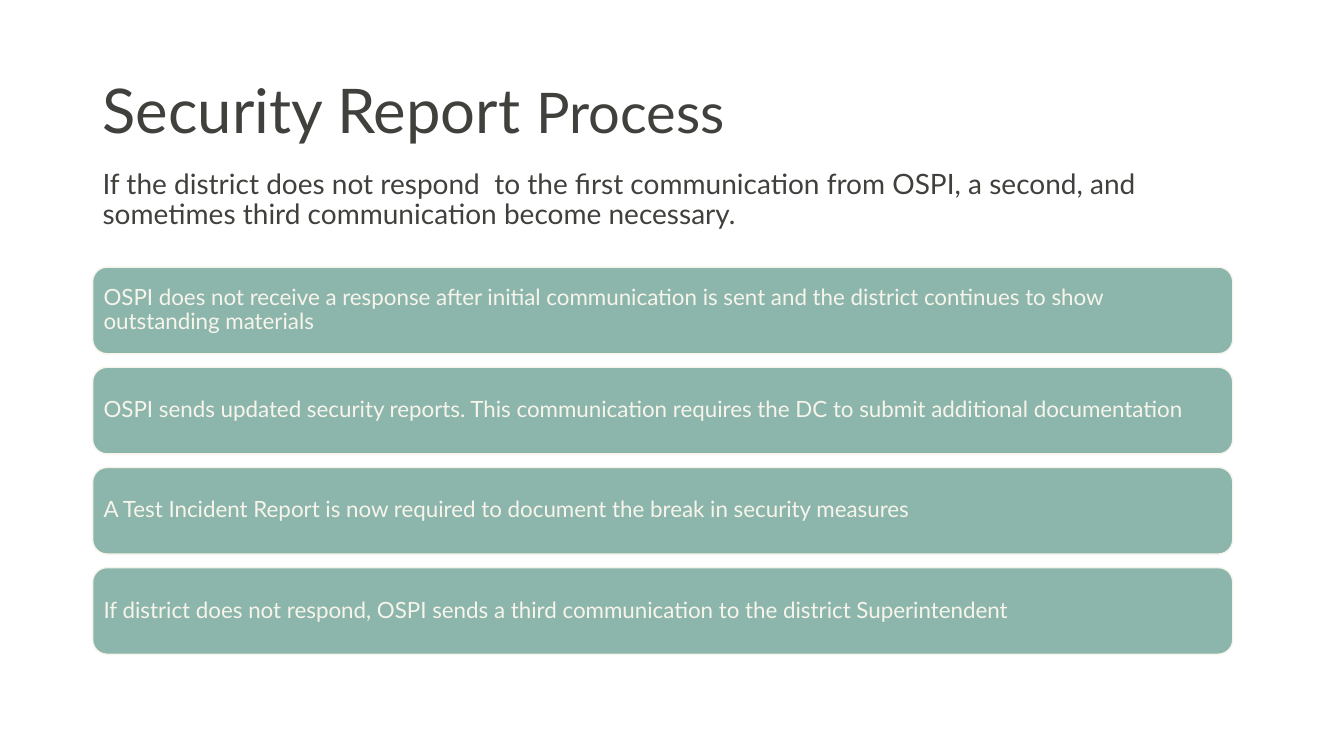
from pptx import Presentation
from pptx.dml.color import RGBColor
from pptx.enum.shapes import MSO_SHAPE
from pptx.enum.text import MSO_ANCHOR, PP_ALIGN
from pptx.util import Pt

COLORS = {"ink": "40403D", "sage": "8CB5AB", "cream": "F7F5EB"}
LEFT = 66.2
STEP_TOP, STEP_PITCH, STEP_WIDTH, STEP_HEIGHT = 190.8, 71.55, 814.4, 61.9

STEPS = [
    "OSPI does not receive a response after initial communication is sent and the district continues to show outstanding materials",
    "OSPI sends updated security reports. This communication requires the DC to submit additional documentation",
    "A Test Incident Report is now required to document the break in security measures",
    "If district does not respond, OSPI sends a third communication to the district Superintendent",
]


class SlideBuilder:
    def __init__(self, slide, font_name):
        self.slide = slide
        self.font_name = font_name

    def fill_text(self, frame, runs, color, anchor, inset_x, inset_y):
        layout = {
            "word_wrap": True,
            "vertical_anchor": anchor,
            "margin_left": Pt(inset_x),
            "margin_right": Pt(inset_x),
            "margin_top": Pt(inset_y),
            "margin_bottom": Pt(inset_y),
        }
        for name, value in layout.items():
            setattr(frame, name, value)
        paragraph = frame.paragraphs[0]
        paragraph.alignment = PP_ALIGN.LEFT
        paragraph.line_spacing = 0.9
        for words, size in runs:
            run = paragraph.add_run()
            run.text = words
            for name, value in {"name": self.font_name, "size": Pt(size)}.items():
                setattr(run.font, name, value)
            run.font.color.rgb = RGBColor.from_string(COLORS[color])

    def text(self, top, width, height, runs, anchor):
        box = self.slide.shapes.add_textbox(Pt(LEFT), Pt(top), Pt(width), Pt(height))
        self.fill_text(box.text_frame, runs, "ink", anchor, 7.2, 3.6)

    def step(self, top, words):
        bar = self.slide.shapes.add_shape(
            MSO_SHAPE.ROUNDED_RECTANGLE, Pt(LEFT), Pt(top), Pt(STEP_WIDTH), Pt(STEP_HEIGHT))
        bar.shadow.inherit = False
        bar.fill.solid()
        bar.fill.fore_color.rgb = RGBColor.from_string(COLORS["sage"])
        bar.line.color.rgb = RGBColor.from_string(COLORS["cream"])
        bar.line.width = Pt(1)
        self.fill_text(bar.text_frame, [(words, 16)], "cream", MSO_ANCHOR.MIDDLE, 4.8, 4.8)


def main():
    deck = Presentation()
    deck.slide_width, deck.slide_height = Pt(960), Pt(540)
    builder = SlideBuilder(deck.slides.add_slide(deck.slide_layouts[6]), "Lato")
    builder.text(28.8, 828, 104.4, [("Security Report ", 44), ("Process", 40)], MSO_ANCHOR.MIDDLE)
    builder.text(118.1, 849.6, 329, [(
        "If the district does not respond  to the first communication from OSPI, "
        "a second, and sometimes third communication become necessary.", 20)], MSO_ANCHOR.TOP)
    for index, words in enumerate(STEPS):
        builder.step(STEP_TOP + index * STEP_PITCH, words)
    deck.save("out.pptx")


if __name__ == "__main__":
    main()
